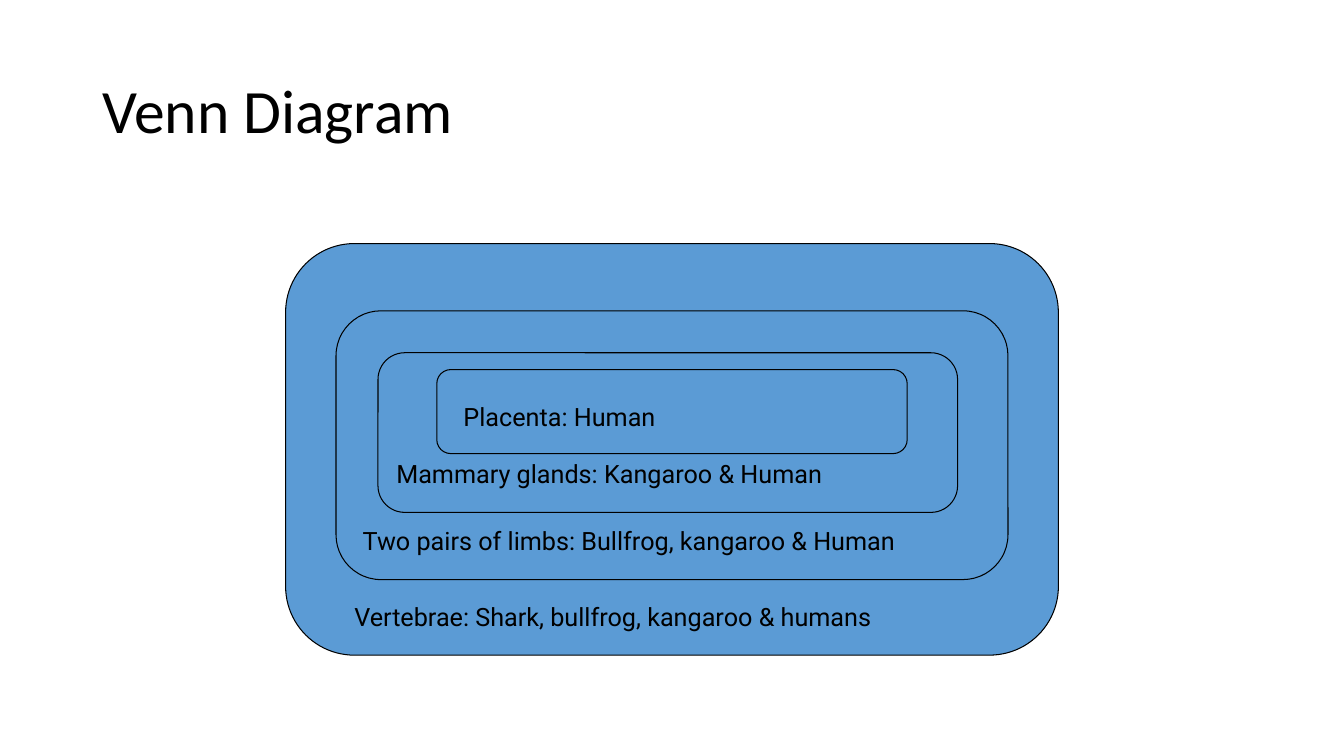
import pptx
import pptx.util
import pptx.dml.color
import pptx.enum.shapes
import pptx.enum.text
from dataclasses import dataclass

Pt = pptx.util.Pt
RGB = pptx.dml.color.RGBColor
ANCHOR = pptx.enum.text.MSO_ANCHOR


@dataclass(frozen=True)
class Theme:
    ink: RGB = RGB.from_string("000000")
    group_fill: RGB = RGB.from_string("5B9BD5")
    title_font: str = "Calibri"
    label_font: str = "Roboto"
    title_size: int = 44
    label_size: int = 18
    line_width: float = 0.75
    corner: float = 0.167


class SlideBuilder:
    def __init__(self, prs, theme):
        self.theme = theme
        self.s = prs.slides.add_slide(prs.slide_layouts[6])

    def text(self, box, words, font, size, anchor=ANCHOR.TOP, spacing=1.0):
        sp = self.s.shapes.add_textbox(*map(Pt, box))
        tf = sp.text_frame
        tf.word_wrap = True
        tf.vertical_anchor = anchor
        p = tf.paragraphs[0]
        p.line_spacing = spacing
        r = p.add_run()
        r.text = words
        for name, value in {"name": font, "size": Pt(size)}.items():
            setattr(r.font, name, value)
        r.font.color.rgb = self.theme.ink

    def title(self, box, words):
        t = self.theme
        self.text(box, words, t.title_font, t.title_size, ANCHOR.MIDDLE, 0.9)

    def label(self, box, words):
        self.text(box, words, self.theme.label_font, self.theme.label_size)

    def group(self, box):
        t = self.theme
        sp = self.s.shapes.add_shape(
            pptx.enum.shapes.MSO_SHAPE.ROUNDED_RECTANGLE, *map(Pt, box))
        sp.adjustments[0] = t.corner
        sp.shadow.inherit = False
        sp.fill.solid()
        sp.fill.fore_color.rgb = t.group_fill
        sp.line.color.rgb = t.ink
        sp.line.width = Pt(t.line_width)


# Nested groups, outermost first: group box, label box, label
LABEL_HEIGHT = 29
GROUPS = [
    ((204, 174, 552, 294), (246, 426, 444, LABEL_HEIGHT),
     "Vertebrae: Shark, bullfrog, kangaroo & humans"),
    ((240, 222, 480, 192), (252, 372, 468, LABEL_HEIGHT),
     "Two pairs of limbs: Bullfrog, kangaroo & Human"),
    ((270, 252, 414, 114), (276, 324, 390, LABEL_HEIGHT),
     "Mammary glands: Kangaroo & Human"),
    ((312, 264, 336, 60), (324, 283, 180, LABEL_HEIGHT),
     "Placenta: Human"),
]


def main():
    prs = pptx.Presentation()
    prs.slide_width, prs.slide_height = Pt(960), Pt(540)
    slide = SlideBuilder(prs, Theme())

    # Title
    slide.title((66, 28.75, 828, 104.4), "Venn Diagram")

    # Venn diagram
    for group_box, label_box, words in GROUPS:
        slide.group(group_box)
        slide.label(label_box, words)

    prs.save("out.pptx")


if __name__ == "__main__":
    main()
